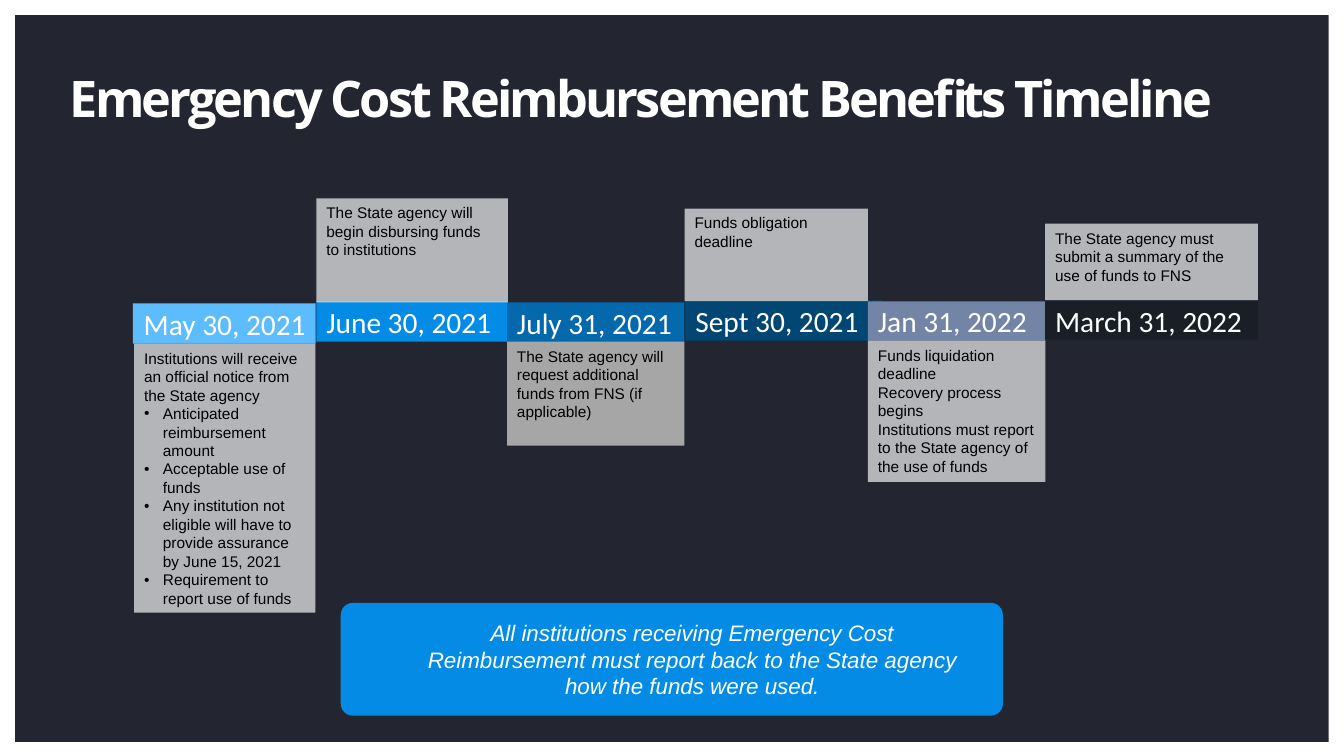
"""Build the Emergency Cost Reimbursement Benefits timeline slide."""
from lxml.etree import SubElement
from pptx import Presentation
from pptx.dml.color import RGBColor
from pptx.enum.shapes import MSO_SHAPE
from pptx.enum.text import MSO_ANCHOR, MSO_AUTO_SIZE, PP_ALIGN
from pptx.oxml.ns import qn
from pptx.util import Pt

WHITE = RGBColor(0xFF, 0xFF, 0xFF)
BLACK = RGBColor(0x00, 0x00, 0x00)
NAVY = RGBColor(0x23, 0x26, 0x31)
BLUE = RGBColor(0x04, 0x8B, 0xE6)
SKY = RGBColor(0x5C, 0xBC, 0xFC)
OCEAN = RGBColor(0x03, 0x68, 0xAC)
DEEP_BLUE = RGBColor(0x02, 0x46, 0x73)
SLATE = RGBColor(0x73, 0x85, 0xA6)
INK = RGBColor(0x19, 0x1E, 0x27)
GRAY = RGBColor(0xA6, 0xA6, 0xA6)
LIGHT_GRAY = RGBColor(0xF2, 0xF2, 0xF2)


def add_block(kind, box, color):
    shape = slide.shapes.add_shape(kind, *[Pt(length) for length in box])
    shape.shadow.inherit = False
    shape.fill.solid()
    shape.fill.fore_color.rgb = color
    shape.line.fill.background()
    return shape


def write_text(shape, lines, font_name, size, color, alignment=PP_ALIGN.LEFT):
    text_frame = shape.text_frame
    text_frame.word_wrap = True
    text_frame.text = "\n".join(lines)
    for paragraph in text_frame.paragraphs:
        paragraph.alignment = alignment
        for run in paragraph.runs:
            run.font.name = font_name
            run.font.size = Pt(size)
            run.font.color.rgb = color


presentation = Presentation()
presentation.slide_width = Pt(960)
presentation.slide_height = Pt(540)
slide = presentation.slides.add_slide(presentation.slide_layouts[5])

title = slide.shapes.title
title.left, title.top, title.width, title.height = Pt(40.3), Pt(24.5), Pt(867), Pt(90)
write_text(title, ["Emergency Cost Reimbursement Benefits Timeline"], "Open Sans", 36, WHITE)
title_frame = title.text_frame
title_frame.auto_size = MSO_AUTO_SIZE.NONE
title_frame.vertical_anchor = MSO_ANCHOR.MIDDLE
title_frame.margin_left = title_frame.margin_right = Pt(9.4)
title_frame.margin_top = title_frame.margin_bottom = Pt(5)
title_run = title_frame.paragraphs[0].runs[0]
title_run.font.bold = True
title_run.font._element.set("spc", "-200")

panel = add_block(MSO_SHAPE.RECTANGLE, (10.8, 10.8, 938.2, 519.1), NAVY)
title.element.addprevious(panel.element)

dates = [
    ("May 30, 2021", (95, 216.7, 130.5, 28.8), SKY, PP_ALIGN.RIGHT),
    ("June 30, 2021", (226, 215.3, 136.8, 28.8), BLUE, PP_ALIGN.LEFT),
    ("July 31, 2021", (362.2, 216, 126.7, 28.8), OCEAN, PP_ALIGN.LEFT),
    ("Sept 30, 2021", (489.6, 214.6, 140.4, 28.8), DEEP_BLUE, PP_ALIGN.LEFT),
    ("Jan 31, 2022", (620, 215.3, 126.7, 28.1), SLATE, PP_ALIGN.LEFT),
    ("March 31, 2022", (746.6, 215.3, 152, 27.4), INK, PP_ALIGN.LEFT),
]
for date, box, color, alignment in dates:
    date_block = add_block(MSO_SHAPE.RECTANGLE, box, color)
    date_block.text_frame.vertical_anchor = MSO_ANCHOR.MIDDLE
    write_text(date_block, [date], "Calibri", 21, WHITE, alignment)

cards = [
    ((95.8, 245.5, 129.6, 192.2), LIGHT_GRAY, [
        "Institutions will receive an official notice from the State agency",
        "Anticipated reimbursement amount",
        "Acceptable use of funds",
        "Any institution not eligible will have to provide assurance by June 15, 2021",
        "Requirement to report use of funds",
    ], 1),
    ((226, 141.8, 136.8, 74.2), LIGHT_GRAY, [
        "The State agency will begin disbursing funds to institutions"], None),
    ((362.2, 244.1, 126.7, 74.2), GRAY, [
        "The State agency will request additional funds from FNS (if applicable)"], None),
    ((489, 149, 131, 66.2), LIGHT_GRAY, ["Funds obligation deadline"], None),
    ((620, 243.4, 126.7, 100.8), LIGHT_GRAY, [
        "Funds liquidation deadline",
        "Recovery process begins",
        "Institutions must report to the State agency of the use of funds",
    ], None),
    ((746.6, 159.8, 152, 54.7), LIGHT_GRAY, [
        "The State agency must submit a summary of the use of funds to FNS"], None),
]
for box, color, lines, first_bullet in cards:
    card = add_block(MSO_SHAPE.RECTANGLE, box, color)
    card.text_frame.vertical_anchor = MSO_ANCHOR.TOP
    write_text(card, lines, "Arial", 11, BLACK)
    if color == LIGHT_GRAY:
        card_color = card.element.spPr.find(qn("a:solidFill"))[0]
        SubElement(card_color, qn("a:alpha")).set("val", "70000")
    if first_bullet is not None:
        for paragraph in card.text_frame.paragraphs[first_bullet:]:
            properties = paragraph._p.get_or_add_pPr()
            properties.set("marL", str(Pt(13.5)))
            properties.set("indent", str(Pt(-13.5)))
            SubElement(properties, qn("a:buFont")).set("typeface", "Arial")
            SubElement(properties, qn("a:buChar")).set("char", "•")

callout = add_block(MSO_SHAPE.ROUNDED_RECTANGLE, (243.4, 430.6, 473, 80.6), BLUE)
callout.adjustments[0] = 0.107
reminder = slide.shapes.add_textbox(Pt(296.6), Pt(438.5), Pt(396), Pt(65.5))
write_text(reminder, [
    "All institutions receiving Emergency Cost Reimbursement must report back "
    "to the State agency how the funds were used."
], "Arial", 16, WHITE, PP_ALIGN.CENTER)
reminder.text_frame.paragraphs[0].runs[0].font.italic = True

presentation.save("out.pptx")
